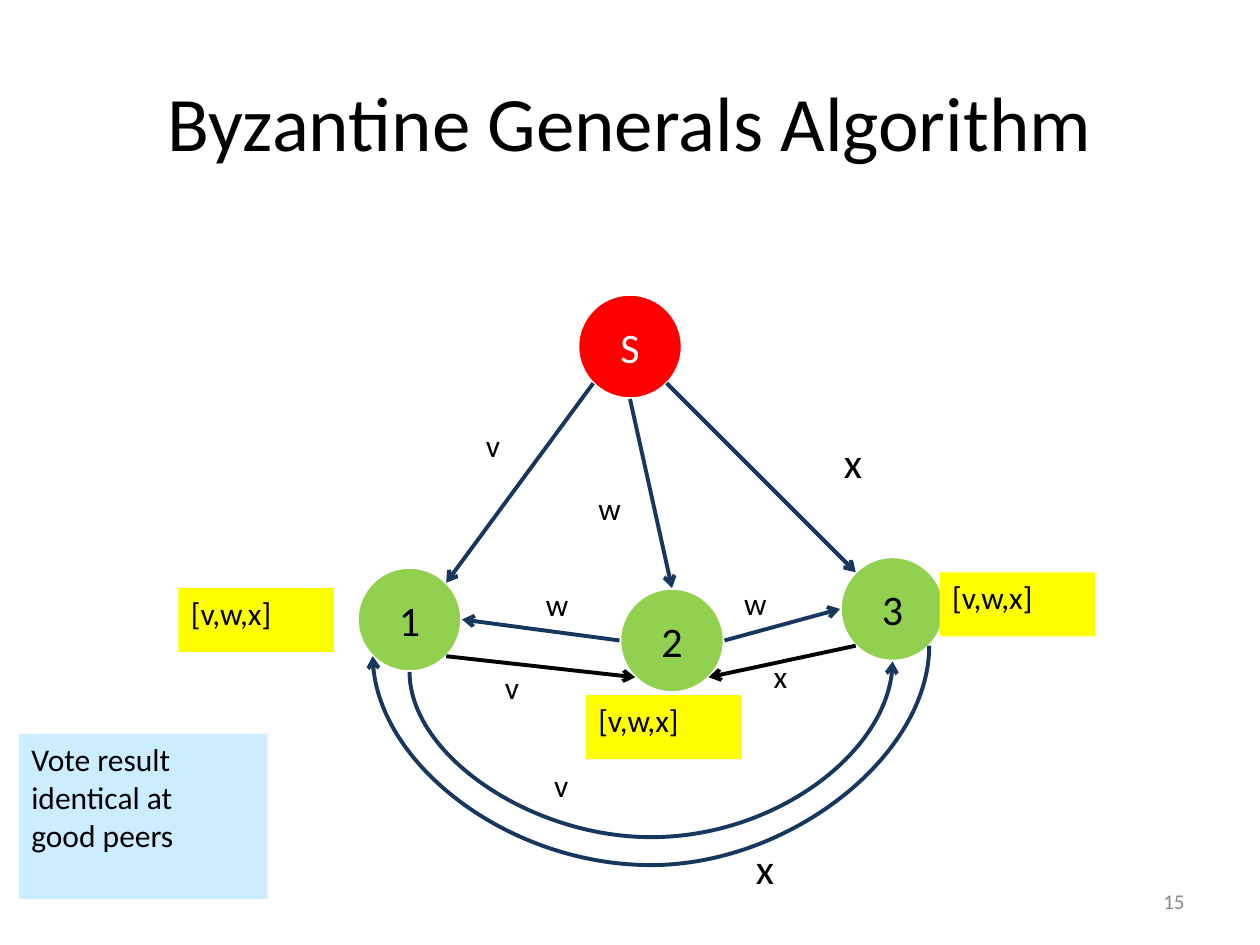
from lxml.etree import SubElement
from pptx import Presentation
from pptx.dml.color import RGBColor
from pptx.enum.shapes import MSO_CONNECTOR, MSO_SHAPE
from pptx.enum.text import MSO_ANCHOR, PP_ALIGN
from pptx.oxml.ns import qn
from pptx.util import Pt

PX = 7620
BLACK = RGBColor(0x00, 0x00, 0x00)
WHITE = RGBColor(0xFF, 0xFF, 0xFF)
RED = RGBColor(0xFF, 0x00, 0x00)
GREEN = RGBColor(0x92, 0xD0, 0x50)
NAVY = RGBColor(0x17, 0x37, 0x5E)
YELLOW = RGBColor(0xFF, 0xFF, 0x00)
SKY = RGBColor(0xCC, 0xEC, 0xFF)
GREY = RGBColor(0x89, 0x89, 0x89)


def write(shape, text, size, color=BLACK, align=PP_ALIGN.LEFT, anchor=MSO_ANCHOR.TOP):
    frame = shape.text_frame
    frame.text = text
    frame.word_wrap = True
    frame.vertical_anchor = anchor
    for para in frame.paragraphs:
        para.alignment = align
        for run in para.runs:
            run.font.name = "Calibri"
            run.font.size = Pt(size)
            run.font.color.rgb = color


def link(kind, ends, color, tip):
    line = slide.shapes.add_connector(kind, *[n * PX for n in ends])
    line.line.color.rgb = color
    line.line.width = Pt(2.25)
    SubElement(line.line._get_or_add_ln(), qn("a:" + tip), type="arrow")
    SubElement(line._element.spPr, qn("a:effectLst"))
    return line


deck = Presentation()
deck.slide_width = 1200 * PX
deck.slide_height = 900 * PX
slide = deck.slides.add_slide(deck.slide_layouts[5])

title = slide.shapes.title
title.left, title.top, title.width, title.height = 90 * PX, 40 * PX, 1020 * PX, 150 * PX
write(title, "Byzantine Generals Algorithm", 44, BLACK, PP_ALIGN.CENTER, MSO_ANCHOR.MIDDLE)

nodes = [
    ("S", 550, 280, RED, WHITE),
    ("1", 340, 540, GREEN, BLACK),
    ("2", 590, 560, GREEN, BLACK),
    ("3", 800, 530, GREEN, BLACK),
]
for name, x, y, fill, ink in nodes:
    node = slide.shapes.add_shape(MSO_SHAPE.OVAL, x * PX, y * PX, 100 * PX, 100 * PX)
    node.shadow.inherit = False
    node.fill.solid()
    node.fill.fore_color.rgb = fill
    node.line.color.rgb = WHITE
    node.line.width = Pt(2)
    write(node, name, 24, ink, PP_ALIGN.CENTER, MSO_ANCHOR.MIDDLE)

spots = {
    "top": (50, 0), "left": (0, 50), "base": (50, 100), "right": (100, 50),
    "nw": (15, 15), "ne": (85, 15), "sw": (15, 85), "se": (85, 85),
}
places = {name: (x, y) for name, x, y, fill, ink in nodes}
for start, out, end, into, color in [
    ("S", "sw", "1", "ne", NAVY),
    ("S", "base", "2", "top", NAVY),
    ("S", "se", "3", "nw", NAVY),
    ("2", "left", "1", "right", NAVY),
    ("2", "right", "3", "left", NAVY),
    ("1", "se", "2", "sw", BLACK),
    ("3", "sw", "2", "se", BLACK),
]:
    ends = [
        base + step
        for name, spot in ((start, out), (end, into))
        for base, step in zip(places[name], spots[spot])
    ]
    link(MSO_CONNECTOR.STRAIGHT, ends, color, "tailEnd")

for mid, span, bend, tip in [
    (620, 530, -1986700, "headEnd"),
    (635, 460, -1571600, "tailEnd"),
]:
    ends = (625, mid + span // 2, 615, mid - span // 2)
    curve = link(MSO_CONNECTOR.CURVE, ends, NAVY, tip)
    props = curve._element.spPr
    props.find(qn("a:xfrm")).set("rot", "5400000")
    guides = props.find(qn("a:prstGeom")).find(qn("a:avLst"))
    SubElement(guides, qn("a:gd"), name="adj1", fmla=f"val {bend}")

for text, x, y, size in [
    ("v", 451, 400, 18),
    ("w", 558, 460, 18),
    ("x", 792, 410, 24),
    ("w", 508, 551, 18),
    ("w", 697, 550, 18),
    ("v", 469, 630, 18),
    ("x", 725, 620, 18),
    ("v", 516, 724, 18),
    ("x", 708, 796, 24),
]:
    label = slide.shapes.add_textbox(x * PX, y * PX, 48 * PX, 61 * PX)
    write(label, text, size)

for text, x, y, wide, high, fill in [
    ("[v,w,x]", 170, 560, 148, 61, YELLOW),
    ("[v,w,x]", 558, 662, 148, 61, YELLOW),
    ("[v,w,x]", 895, 545, 148, 61, YELLOW),
    ("Vote result\videntical at\vgood peers", 18, 699, 237, 157, SKY),
]:
    box = slide.shapes.add_shape(MSO_SHAPE.RECTANGLE, x * PX, y * PX, wide * PX, high * PX)
    box.shadow.inherit = False
    box.fill.solid()
    box.fill.fore_color.rgb = fill
    box.line.fill.background()
    write(box, text, 18)

page = slide.shapes.add_textbox(860 * PX, 834 * PX, 280 * PX, 48 * PX)
write(page, "15", 12, GREY, PP_ALIGN.RIGHT, MSO_ANCHOR.MIDDLE)

deck.save("out.pptx")
